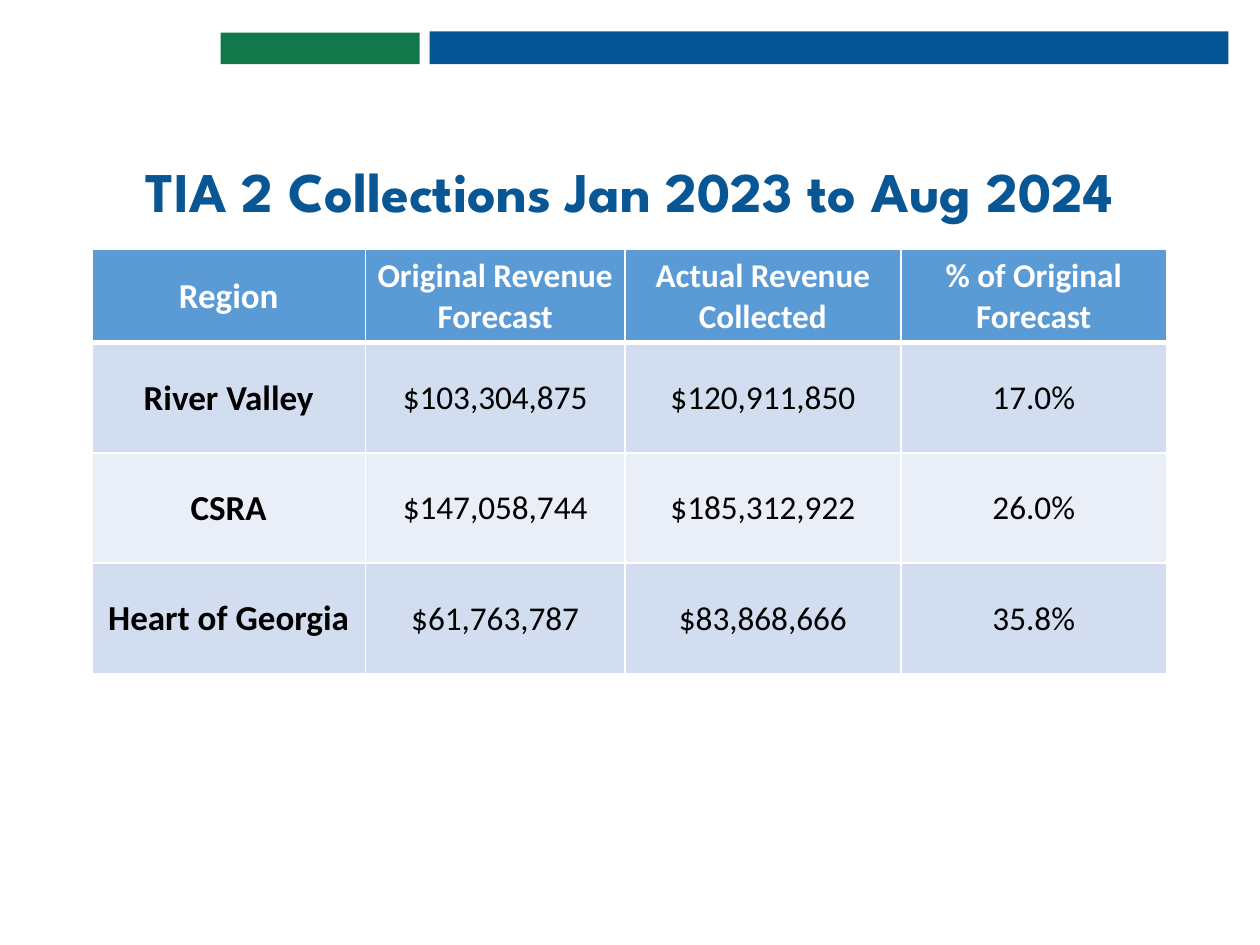
import pptx
import pptx.dml.color
import pptx.enum.shapes
import pptx.enum.text
import pptx.oxml
import pptx.oxml.ns
import pptx.util

GREEN, BLUE, TITLE_BLUE = "12784B", "035594", "085694"
HEADER_FILL, BANDS = "5B9BD5", ("D2DEEF", "EAEFF7")
WHITE, BLACK = "FFFFFF", "000000"

TABLE_ROWS = [
    ["Region", "Original Revenue Forecast", "Actual Revenue Collected", "% of Original Forecast"],
    ["River Valley", "$103,304,875", "$120,911,850", "17.0%"],
    ["CSRA", "$147,058,744", "$185,312,922", "26.0%"],
    ["Heart of Georgia", "$61,763,787", "$83,868,666", "35.8%"],
]


def color(hex_string):
    return pptx.dml.color.RGBColor.from_string(hex_string)


class SlideBuilder:
    """Places elements on a grid of 100 columns by 75 rows."""

    body_font, title_font = "Calibri", "League Spartan"

    def __init__(self, presentation):
        self.column = presentation.slide_width / 100
        self.row = presentation.slide_height / 75
        self.slide = presentation.slides.add_slide(presentation.slide_layouts[6])

    def box(self, left, top, width, height):
        return (round(left * self.column), round(top * self.row),
                round(width * self.column), round(height * self.row))

    def style_text(self, text_frame, text, font_name, size, hex_string, bold):
        text_frame.text = text
        text_frame.word_wrap = True
        paragraph = text_frame.paragraphs[0]
        paragraph.alignment = pptx.enum.text.PP_ALIGN.CENTER
        font = paragraph.runs[0].font
        font.name, font.size, font.bold = font_name, pptx.util.Pt(size), bold
        font.color.rgb = color(hex_string)
        return paragraph

    def bar(self, hex_string, *place):
        shape = self.slide.shapes.add_shape(
            pptx.enum.shapes.MSO_SHAPE.RECTANGLE, *self.box(*place))
        shape.shadow.inherit = False
        shape.fill.solid()
        shape.fill.fore_color.rgb = color(hex_string)
        shape.line.fill.background()

    def title(self, text, *place):
        text_frame = self.slide.shapes.add_textbox(*self.box(*place)).text_frame
        text_frame.vertical_anchor = pptx.enum.text.MSO_ANCHOR.BOTTOM
        paragraph = self.style_text(text_frame, text, self.title_font, 32, TITLE_BLUE, True)
        paragraph.line_spacing = 0.9

    def border(self, cell, side, points):
        namespace = pptx.oxml.ns.nsdecls("a")
        cell._tc.get_or_add_tcPr().append(pptx.oxml.parse_xml(
            f'<a:ln{side} {namespace} w="{pptx.util.Pt(points)}"><a:solidFill>'
            f'<a:srgbClr val="{WHITE}"/></a:solidFill></a:ln{side}>'))

    def cell(self, cell, text, row, column):
        is_header, is_region = row == 0, column == 0
        cell.vertical_anchor = pptx.enum.text.MSO_ANCHOR.MIDDLE
        cell.margin_left = cell.margin_top = cell.margin_right = pptx.util.Inches(0.01)
        cell.margin_bottom = 0
        # The rule below the header is the thick one
        for side, thick in (("L", False), ("R", False), ("T", row == 1), ("B", is_header)):
            self.border(cell, side, 3 if thick else 1)
        cell.fill.solid()
        cell.fill.fore_color.rgb = color(HEADER_FILL if is_header else BANDS[(row - 1) % 2])
        self.style_text(cell.text_frame, text, self.body_font, 20 if is_region else 19,
                        WHITE if is_header else BLACK, is_header or is_region)

    def table(self, rows, left, top, widths, heights):
        table = self.slide.shapes.add_table(
            len(rows), len(widths), *self.box(left, top, sum(widths), sum(heights))).table
        for table_column, width in zip(table.columns, widths):
            table_column.width = round(width * self.column)
        for row, (texts, height) in enumerate(zip(rows, heights)):
            table.rows[row].height = round(height * self.row)
            for column, text in enumerate(texts):
                self.cell(table.cell(row, column), text, row, column)


def main():
    presentation = pptx.Presentation()
    presentation.slide_width = pptx.util.Inches(10)
    presentation.slide_height = pptx.util.Inches(7.5)
    builder = SlideBuilder(presentation)

    # Bars across the top
    builder.bar(BLUE, 34.1, 2.5, 63.4, 2.6)
    builder.bar(GREEN, 17.5, 2.6, 15.8, 2.5)

    # Title and collections table
    builder.title("TIA 2 Collections Jan 2023 to Aug 2024", 0, 12, 100, 6.3)
    builder.table(TABLE_ROWS, 7.3, 19.8, [21.7, 20.6, 21.9, 21.1], [7.4] + [8.75] * 3)

    presentation.save("out.pptx")


if __name__ == "__main__":
    main()
